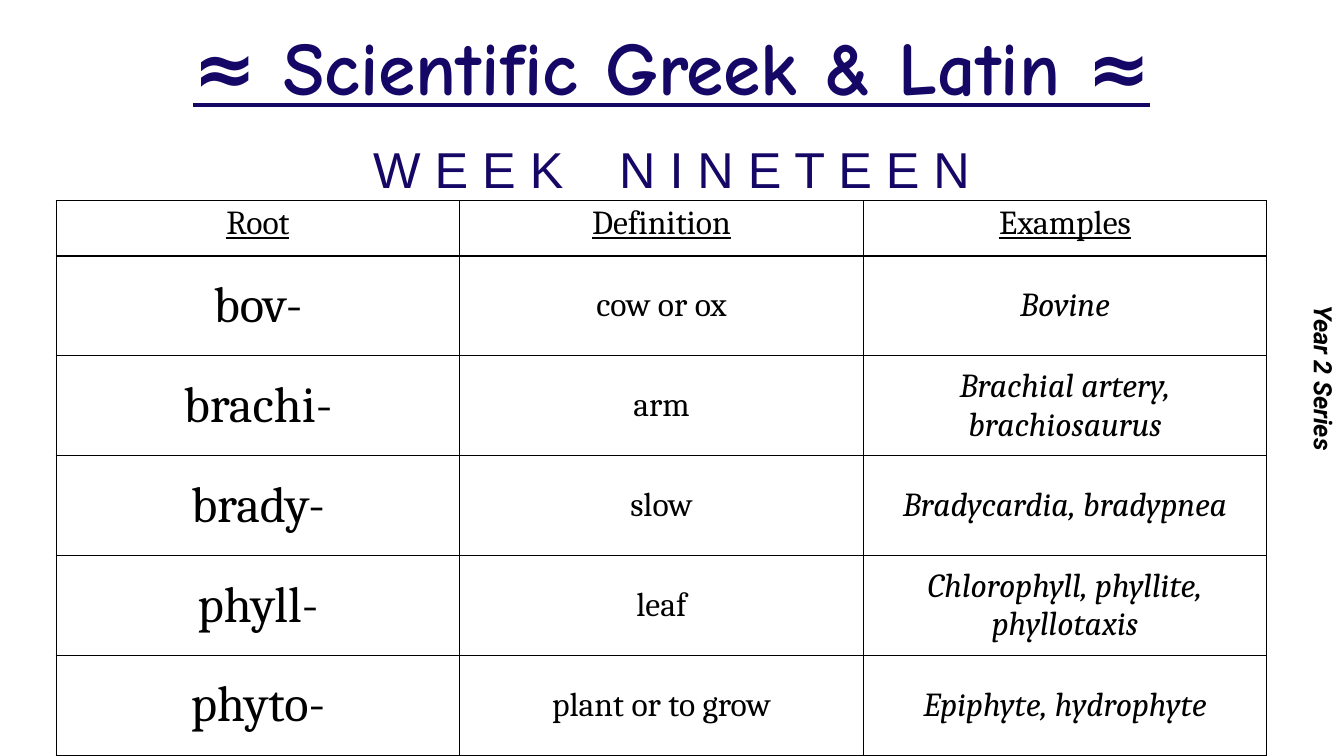
from lxml.etree import SubElement
from pptx import Presentation
from pptx.dml.color import RGBColor
from pptx.enum.text import MSO_ANCHOR, PP_ALIGN
from pptx.oxml.ns import qn
from pptx.util import Pt

NAVY = RGBColor(0x15, 0x07, 0x65)
BLACK = RGBColor(0, 0, 0)

HEADINGS = ("Root", "Definition", "Examples")
ROOTS = (
    ("bov-", "cow or ox", "Bovine"),
    ("brachi-", "arm", "Brachial artery, brachiosaurus"),
    ("brady-", "slow", "Bradycardia, bradypnea"),
    ("phyll-", "leaf", "Chlorophyll, phyllite, phyllotaxis"),
    ("phyto-", "plant or to grow", "Epiphyte, hydrophyte"),
)
COLUMN_WIDTH = 288.2
HEADING_HEIGHT = 39.6
ROOT_HEIGHT = 71.4

HEADING_FORMAT = {"size": Pt(24), "underline": True}
COLUMN_FORMATS = (
    {"size": Pt(36)},
    {"size": Pt(24)},
    {"size": Pt(24), "italic": True},
)


def write_centred(frame, text, font_name, color, formats):
    para = frame.paragraphs[0]
    para.alignment = PP_ALIGN.CENTER
    span = para.add_run()
    span.text = text
    span.font.name = font_name
    span.font.color.rgb = color
    for name, value in formats.items():
        setattr(span.font, name, value)
    return para


def add_text(page, place, text, font_name, color, formats):
    box = page.shapes.add_textbox(*map(Pt, place))
    box.text_frame.word_wrap = True
    box.text_frame.vertical_anchor = MSO_ANCHOR.MIDDLE
    write_centred(box.text_frame, text, font_name, color, formats)
    return box


def outline_cell(cell):
    properties = cell._tc.get_or_add_tcPr()
    for side in ("a:lnL", "a:lnR", "a:lnT", "a:lnB"):
        line = SubElement(properties, qn(side), w=str(Pt(1)))
        fill = SubElement(line, qn("a:solidFill"))
        SubElement(fill, qn("a:srgbClr"), val=str(BLACK))
    cell.fill.background()


def fill_cell(cell, text, formats, anchor, side_margin, end_margin):
    outline_cell(cell)
    cell.vertical_anchor = anchor
    cell.margin_left = cell.margin_right = Pt(side_margin)
    cell.margin_top = cell.margin_bottom = Pt(end_margin)
    write_centred(cell.text_frame, text, "Cambria", BLACK, formats)


def add_root_table(page):
    heights = [HEADING_HEIGHT] + [ROOT_HEIGHT] * len(ROOTS)
    table = page.shapes.add_table(
        len(heights), len(HEADINGS), Pt(40.2), Pt(143.2),
        Pt(COLUMN_WIDTH * len(HEADINGS)), Pt(sum(heights)),
    ).table
    table.first_row = table.horz_banding = False
    for row, height in zip(table.rows, heights):
        row.height = Pt(height)
    for index, heading in enumerate(HEADINGS):
        table.columns[index].width = Pt(COLUMN_WIDTH)
        fill_cell(table.cell(0, index), heading, HEADING_FORMAT,
                  MSO_ANCHOR.TOP, 5, 2.9)
    for row_index, entry in enumerate(ROOTS, 1):
        for index, text in enumerate(entry):
            fill_cell(table.cell(row_index, index), text,
                      COLUMN_FORMATS[index], MSO_ANCHOR.MIDDLE, 7.2, 3.6)


def main():
    deck = Presentation()
    deck.slide_width, deck.slide_height = Pt(960), Pt(540)
    page = deck.slides.add_slide(deck.slide_layouts[6])

    title = add_text(page, (120, 0, 720, 102), "≈ Scientific Greek & Latin ≈",
                     "Comic Neue", NAVY,
                     {"size": Pt(54), "bold": True, "underline": True})
    title.text_frame.paragraphs[0].line_spacing = 0.9
    add_text(page, (120, 94.5, 720, 51), "W E E K    N I N E T E E N",
             "Arial", NAVY, {"size": Pt(36)})
    add_root_table(page)
    series = add_text(page, (923.7, 0, 36.3, 540), "Year 2 Series", "Roboto",
                      BLACK, {"size": Pt(18), "bold": True, "italic": True})
    series.text_frame.vertical_anchor = MSO_ANCHOR.TOP
    series.element.txBody.bodyPr.set("vert", "vert")

    deck.save("out.pptx")


if __name__ == "__main__":
    main()
